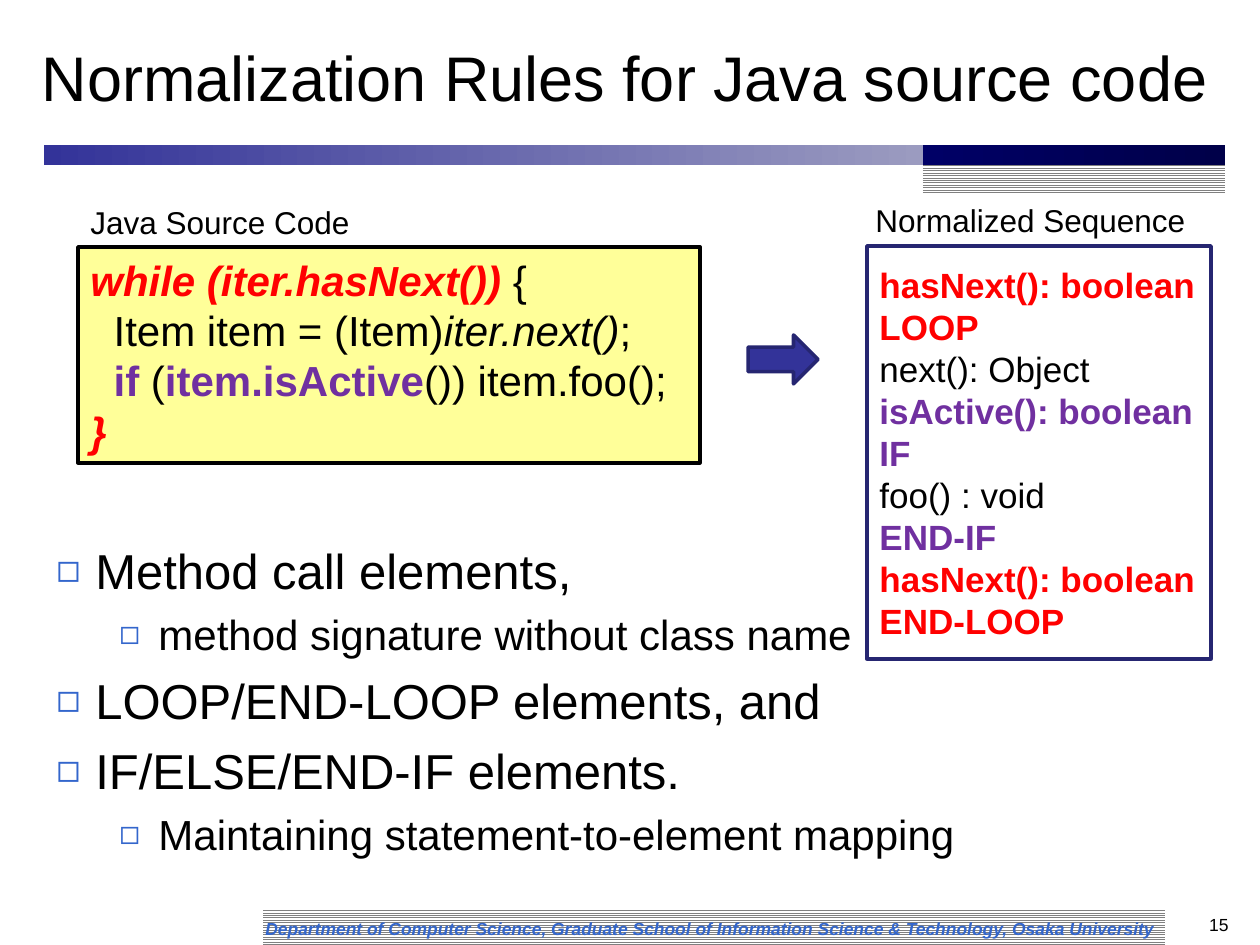
from typing import NamedTuple

from lxml import etree
from pptx import Presentation
from pptx import util as u
from pptx.dml.color import RGBColor
from pptx.enum import dml, shapes, text
from pptx.oxml.ns import qn

PX = 914400 / 126  # EMU in one px
COLORS = {
    "black": "000000", "white": "FFFFFF", "gray": "808080", "red": "FF0000",
    "purple": "7030A0", "yellow": "FFFF99", "blue": "333399", "pale": "9B9BC0",
    "navy": "000066", "night": "000049", "edge": "262671", "link": "3366CC",
}
RECT = shapes.MSO_SHAPE.RECTANGLE
MIDDLE = text.MSO_ANCHOR.MIDDLE


class Box(NamedTuple):
    left: int
    top: int
    width: int
    height: int


class Run(NamedTuple):
    words: str
    color: str = "black"
    bold: bool = False
    slant: bool = False


class Item(NamedTuple):
    words: str
    level: int = 0


class Bar(NamedTuple):
    box: Box
    first: str
    last: str


def rgb(name: str) -> RGBColor:
    return RGBColor.from_string(COLORS[name])


def place(box: Box) -> list[int]:
    return [round(v * PX) for v in box]


def write(frame, lines: list[list[Run]], size: int, anchor=text.MSO_ANCHOR.TOP,
          align=text.PP_ALIGN.LEFT, wrap: bool = True) -> None:
    """Fill a text frame, one list of runs to a paragraph."""
    frame.word_wrap = wrap
    frame.auto_size = text.MSO_AUTO_SIZE.NONE
    frame.vertical_anchor = anchor
    for i, line in enumerate(lines):
        para = frame.paragraphs[0] if i == 0 else frame.add_paragraph()
        para.alignment = align
        for part in line:
            run = para.add_run()
            run.text = part.words
            font = run.font
            font.name, font.size = "Arial", u.Pt(size)
            font.bold, font.italic = part.bold, part.slant
            font.color.rgb = rgb(part.color)


def label(slide, box: Box, run: Run, size: int, **form) -> None:
    write(slide.shapes.add_textbox(*place(box)).text_frame, [[run]], size, **form)


def block(slide, box: Box, kind=RECT, fill: str = "", line: str = ""):
    shape = slide.shapes.add_shape(kind, *place(box))
    shape.shadow.inherit = False
    if fill:
        shape.fill.solid()
        shape.fill.fore_color.rgb = rgb(fill)
    if line:
        shape.line.color.rgb = rgb(line)
        shape.line.width = u.Pt(2)
    else:
        shape.line.fill.background()
    return shape


def stripe(slide, box: Box) -> None:
    fill = block(slide, box).fill
    fill.patterned()
    fill.pattern = dml.MSO_PATTERN.LIGHT_HORIZONTAL
    fill.fore_color.rgb = rgb("gray")
    fill.back_color.rgb = rgb("white")


def fade(slide, bar: Bar) -> None:
    fill = block(slide, bar.box).fill
    fill.gradient()
    fill.gradient_angle = 0
    for stop, name in zip(fill.gradient_stops, (bar.first, bar.last)):
        stop.color.rgb = rgb(name)


def bullet(para, level: int) -> None:
    """Give a paragraph a hanging square bullet."""
    props = para._p.get_or_add_pPr()
    props.set("marL", str(round((39 + 63 * level) * PX)))
    props.set("indent", str(round(-39 * PX)))
    tint = etree.SubElement(props, qn("a:buClr"))
    etree.SubElement(tint, qn("a:srgbClr"), val=COLORS["link"])
    etree.SubElement(props, qn("a:buSzPct"), val="80000")
    etree.SubElement(props, qn("a:buFont"), typeface="Arial")
    etree.SubElement(props, qn("a:buChar"), char="◻")
    para.level = level


def outline(slide, box: Box, items: list[Item]) -> None:
    frame = slide.shapes.add_textbox(*place(box)).text_frame
    write(frame, [[Run(item.words)] for item in items], 28)
    for i, (para, item) in enumerate(zip(frame.paragraphs, items)):
        bullet(para, item.level)
        size = 28 - 4 * item.level
        para.runs[0].font.size = u.Pt(size)
        if i:
            para.space_before = u.Pt(size * 0.23)


CODE = [
    [Run("while (iter.hasNext())", "red", True, True), Run(" {")],
    [Run("  Item item = (Item)"), Run("iter.next()", slant=True), Run(";")],
    [Run("  "), Run("if", "purple", True), Run(" ("),
     Run("item.isActive", "purple", True), Run("()) item.foo();")],
    [Run("}", "red", True, True)],
]
TOKENS = [
    Run("hasNext(): boolean", "red", True), Run("LOOP", "red", True),
    Run("next(): Object"),
    Run("isActive(): boolean", "purple", True), Run("IF", "purple", True),
    Run("foo() : void"), Run("END-IF", "purple", True),
    Run("hasNext(): boolean", "red", True), Run("END-LOOP", "red", True),
]
ITEMS = [
    Item("Method call elements,"),
    Item("method signature without class name", 1),
    Item("LOOP/END-LOOP elements, and"),
    Item("IF/ELSE/END-IF elements."),
    Item("Maintaining statement-to-element mapping", 1),
]
BARS = [
    Bar(Box(44, 145, 879, 20), "blue", "pale"),
    Bar(Box(923, 145, 302, 20), "navy", "night"),
]
STRIPES = [Box(263, 908, 902, 37), Box(923, 156, 302, 38)]


def main() -> None:
    deck = Presentation()
    deck.slide_width, deck.slide_height = u.Inches(10), u.Inches(7.5)
    slide = deck.slides.add_slide(deck.slide_layouts[5])

    # Bands and footer
    for box in STRIPES:
        stripe(slide, box)
    for bar in BARS:
        fade(slide, bar)
    label(slide, Box(253, 911, 922, 34),
          Run("Department of Computer Science, Graduate School of Information "
              "Science & Technology, Osaka University", "link", True, True),
          10, anchor=MIDDLE)
    label(slide, Box(1166, 908, 75, 37), Run("15"), 10, align=text.PP_ALIGN.RIGHT)

    # Title
    title = slide.shapes.title
    title.left, title.top, title.width, title.height = place(Box(29, 16, 1196, 120))
    write(title.text_frame, [[Run("Normalization Rules for Java source code")]],
          36, anchor=MIDDLE)

    # Source code, arrow and token list
    code = block(slide, Box(78, 247, 622, 216), fill="yellow", line="black")
    write(code.text_frame, CODE, 24, anchor=MIDDLE, wrap=False)
    block(slide, Box(748, 335, 70, 49), shapes.MSO_SHAPE.RIGHT_ARROW, "blue", "edge")
    tokens = block(slide, Box(867, 246, 344, 413), fill="white", line="edge")
    write(tokens.text_frame, [[run] for run in TOKENS], 20, anchor=MIDDLE)
    label(slide, Box(78, 197, 287, 50), Run("Java Source Code"), 18, wrap=False)
    label(slide, Box(863, 195, 338, 50), Run("Normalized Sequence"), 18, wrap=False)

    # Bullet list
    outline(slide, Box(44, 534, 1181, 336), ITEMS)

    deck.save("out.pptx")


if __name__ == "__main__":
    main()
